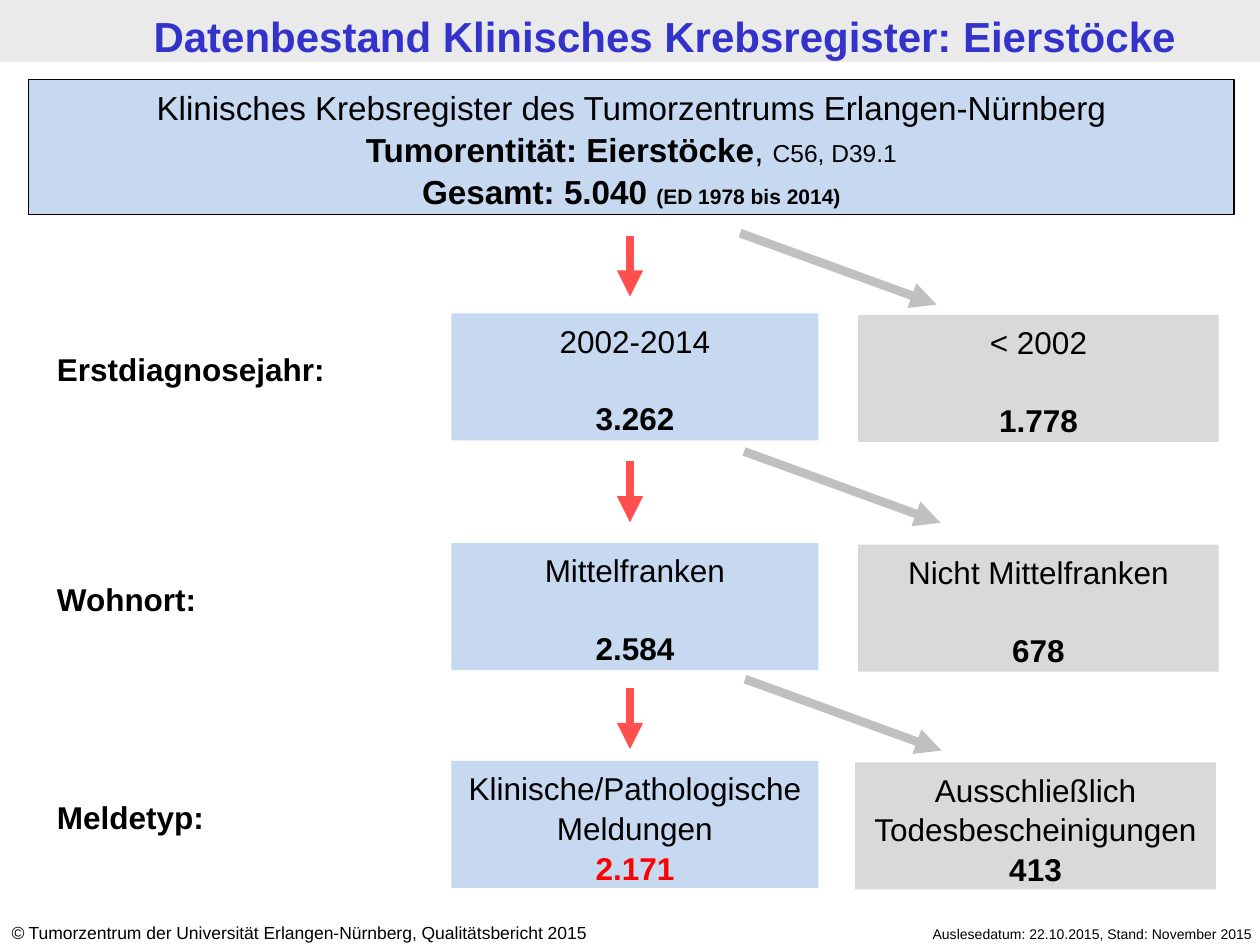
from dataclasses import dataclass
from lxml.etree import SubElement
from pptx import Presentation
from pptx.dml.color import RGBColor as Rgb
from pptx.enum.shapes import MSO_CONNECTOR as Conn, MSO_SHAPE as Kind
from pptx.enum.text import MSO_ANCHOR as Anchor, MSO_AUTO_SIZE as Auto, PP_ALIGN as Align
from pptx.oxml.ns import qn
from pptx.util import Cm, Pt


@dataclass(frozen=True)
class Theme:
    font: str = "Arial"
    ink: str = "000000"
    title: str = "3333CC"
    band: str = "EAEAEA"
    blue: str = "C6D9F1"
    gray: str = "D9D9D9"
    red: str = "FF0000"
    main: str = "FF5050"
    side: str = "C0C0C0"
    head: int = 24
    lead: int = 19
    body: int = 18
    code: int = 14
    span: int = 12
    foot: int = 10
    date: int = 8


T = Theme()


def write(shape, lines, size=T.body, color=T.ink, bold=False, align=Align.CENTER,
          pads=(0.25, 0.13, 0.25, 0.13), gap=0):
    frame = shape.text_frame
    frame.auto_size = Auto.NONE
    frame.word_wrap = True
    frame.vertical_anchor = Anchor.TOP
    (frame.margin_left, frame.margin_top,
     frame.margin_right, frame.margin_bottom) = map(Cm, pads)
    for i, line in enumerate(lines):
        para = frame.add_paragraph() if i else frame.paragraphs[0]
        para.alignment = align
        para.line_spacing = 1.05
        para.space_before = Pt(gap if i else 0)
        for words, form in line:
            run = para.add_run()
            run.text = words
            font = run.font
            font.name = T.font
            font.size = Pt(form.get("size", size))
            font.bold = form.get("bold", bold)
            font.italic = form.get("italic", False)
            font.color.rgb = Rgb.from_string(form.get("color", color))


def panel(slide, box, fill, lines, edge=None, **form):
    shape = slide.shapes.add_shape(Kind.RECTANGLE, *map(Cm, box))
    shape.shadow.inherit = False
    shape.fill.solid()
    shape.fill.fore_color.rgb = Rgb.from_string(fill)
    if edge:
        shape.line.color.rgb = Rgb.from_string(edge)
        shape.line.width = Pt(0.75)
    else:
        shape.line.fill.background()
    write(shape, lines, **form)


def note(slide, box, line, **form):
    write(slide.shapes.add_textbox(*map(Cm, box)), [line], **form)


def arrow(slide, x, y, dx, dy, color):
    link = slide.shapes.add_connector(Conn.STRAIGHT, Cm(x), Cm(y), Cm(x + dx), Cm(y + dy))
    link.line.color.rgb = Rgb.from_string(color)
    link.line.width = Pt(5)
    SubElement(link.line._get_or_add_ln(), qn("a:tailEnd"), type="triangle")
    SubElement(link._element.spPr, qn("a:effectLst"))


def header(slide, box):
    left, top, wide, high = box
    title = slide.shapes.title
    title.left, title.top, title.width, title.height = map(Cm, (left, top, wide, 1.25))
    title.fill.solid()
    title.fill.fore_color.rgb = Rgb.from_string(T.band)
    write(title, [[("Datenbestand Klinisches Krebsregister: Eierstöcke", {})]],
          size=T.head, color=T.title, bold=True, pads=(1.6, 0.16, 0.2, 0))
    lines = [
        [("Klinisches Krebsregister des Tumorzentrums Erlangen-Nürnberg", {})],
        [("Tumorentität: Eierstöcke", {"bold": True}), (", ", {}),
         ("C56, D39.1", {"size": T.code})],
        [("Gesamt: 5.040 ", {"bold": True}),
         ("(ED 1978 bis 2014)", {"bold": True, "size": T.span})],
    ]
    panel(slide, (left + 0.58, top + 1.6, wide - 1.1, high - 1.6), T.blue, lines,
          edge=T.ink, size=T.lead, pads=(0.28, 0.13, 0.28, 0.13))


def step(slide, box, label, kept, rest, drop, start, shift=0, gap=21.7, color=T.ink):
    left, top, wide, high = box
    note(slide, (left, top + 0.57, 7, 1.02), [(label, {})], bold=True, align=Align.LEFT)
    cells = [
        (left + 8.2, top, 7.4, T.blue, kept, color),
        (left + wide - 7.27 + shift, top + 0.03, 7.27, T.gray, rest, T.ink),
    ]
    for x, y, w, fill, (name, count), tint in cells:
        lines = [[(name, {})], [(count, {"bold": True, "color": tint})]]
        panel(slide, (x, y, w, high), fill, lines, gap=gap)
    arrow(slide, left + 11.8, top - drop, 0, 1.23, T.main)
    arrow(slide, left + start[0], top - start[1], 3.96, 1.44, T.side)


def footer(slide, box):
    left, top, wide, high = box
    note(slide, (left, top, 13.3, high),
         [("©", {"italic": True}),
          (" Tumorzentrum der Universität Erlangen-Nürnberg, Qualitätsbericht 2015", {})],
         size=T.foot, align=Align.LEFT)
    note(slide, (left + wide - 8.6, top + 0.08, 8.6, high - 0.08),
         [("Auslesedatum: 22.10.2015, Stand: November 2015", {})],
         size=T.date, align=Align.RIGHT)


def main():
    deck = Presentation()
    deck.slide_width, deck.slide_height = Cm(25.4), Cm(19.05)
    slide = deck.slides.add_slide(deck.slide_layouts[5])
    header(slide, (0, 0, 25.4, 4.32))
    steps = [
        (6.32, "Erstdiagnosejahr:", ("2002-2014", "3.262"), ("< 2002", "1.778"),
         1.57, (14.02, 1.62), {}),
        (10.95, "Wohnort:", ("Mittelfranken", "2.584"), ("Nicht Mittelfranken", "678"),
         1.65, (14.1, 1.85), {}),
        (15.34, "Meldetyp:", ("Klinische/Pathologische Meldungen", "2.171"),
         ("Ausschließlich Todesbescheinigungen", "413"),
         1.47, (14.12, 1.65), {"shift": -0.06, "gap": 0, "color": T.red}),
    ]
    for top, label, kept, rest, drop, start, form in steps:
        step(slide, (0.9, top, 23.67, 2.56), label, kept, rest, drop, start, **form)
    footer(slide, (-0.02, 18.44, 25.52, 0.68))
    deck.save("out.pptx")


if __name__ == "__main__":
    main()
